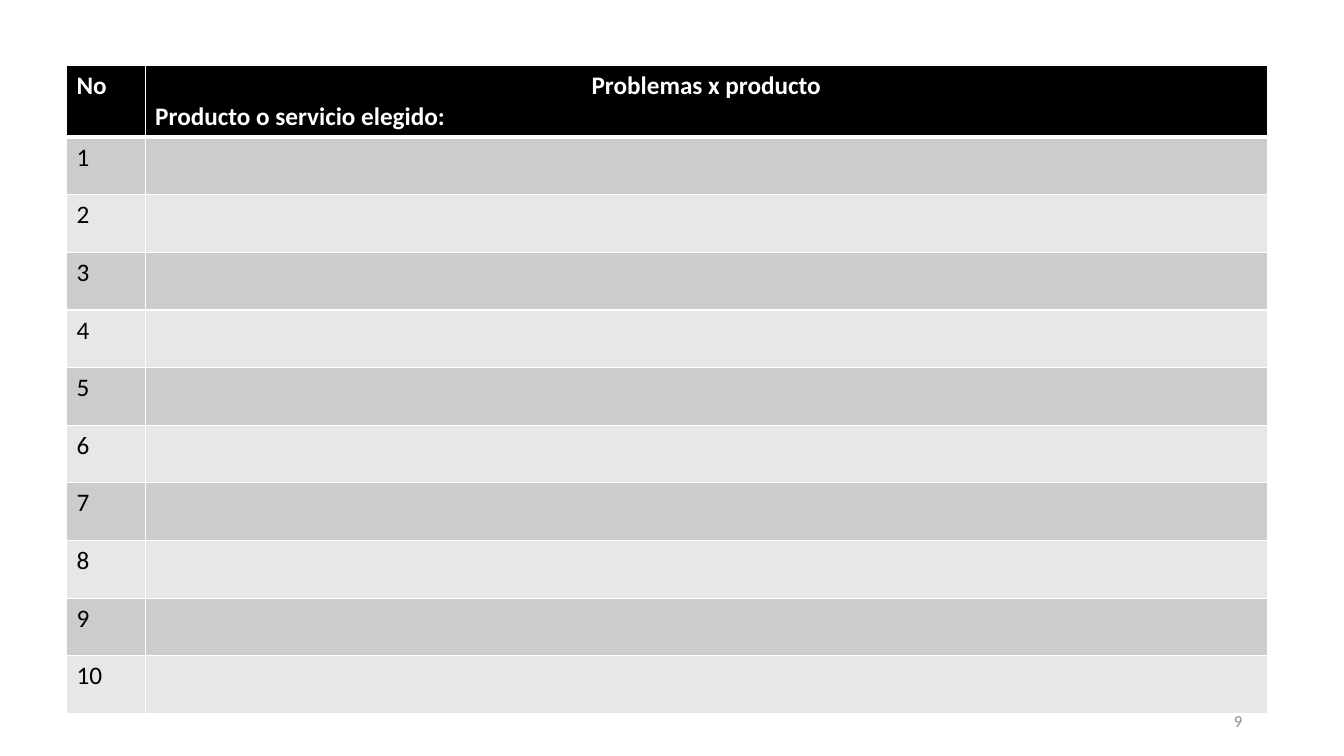
"""Build a numbered worksheet table for the problems of a chosen product."""
from dataclasses import dataclass

from lxml.etree import SubElement
from pptx import Presentation
from pptx.dml.color import RGBColor
from pptx.enum.text import MSO_ANCHOR, PP_ALIGN
from pptx.oxml.ns import qn
from pptx.util import Inches, Pt

COLORS = {
    "header": "000000",
    "odd": "CCCCCC",
    "even": "E7E7E7",
    "border": "FFFFFF",
    "header_text": "FFFFFF",
    "body_text": "000000",
    "page_number": "8C8C8C",
}
FORMATS = {
    "header_text": {"name": "Calibri", "size": Pt(18), "bold": True},
    "body_text": {"name": "Calibri", "size": Pt(18), "bold": False},
    "page_number": {"name": "Calibri", "size": Pt(12), "bold": False},
}
COLUMN_WIDTHS = (0.78, 11.13)
TABLE_HEIGHT = 6.42
HEADER_HEIGHT = 0.7
PROBLEM_COUNT = 10


@dataclass(frozen=True)
class Line:
    text: str
    alignment: PP_ALIGN = PP_ALIGN.LEFT


@dataclass(frozen=True)
class Row:
    cells: tuple[tuple[Line, ...], ...]
    fill: str
    style: str
    height: float
    top_border: float = 1
    bottom_border: float = 1


def write_lines(text_frame, lines: tuple[Line, ...], style: str) -> None:
    for index, line in enumerate(lines):
        paragraph = text_frame.add_paragraph() if index else text_frame.paragraphs[0]
        paragraph.alignment = line.alignment
        run = paragraph.add_run()
        run.text = line.text
        for attribute, value in FORMATS[style].items():
            setattr(run.font, attribute, value)
        run.font.color.rgb = RGBColor.from_string(COLORS[style])


def add_borders(cell, top: float, bottom: float) -> None:
    properties = cell._tc.get_or_add_tcPr()
    widths = {"a:lnL": 1, "a:lnR": 1, "a:lnT": top, "a:lnB": bottom}
    for index, (tag, width) in enumerate(widths.items()):
        border = SubElement(properties, qn(tag), w=str(Pt(width)))
        fill = SubElement(border, qn("a:solidFill"))
        SubElement(fill, qn("a:srgbClr"), val=COLORS["border"])
        properties.insert(index, border)


def worksheet_rows() -> list[Row]:
    title = Line("Problemas x producto", PP_ALIGN.CENTER)
    subtitle = Line("Producto o servicio elegido:")
    header = Row(
        ((Line("No"),), (title, subtitle)),
        "header", "header_text", HEADER_HEIGHT, bottom_border=3,
    )
    body_height = (TABLE_HEIGHT - HEADER_HEIGHT) / PROBLEM_COUNT
    body = [
        Row(
            ((Line(str(number)),), ()),
            "odd" if number % 2 else "even", "body_text", body_height,
            top_border=3 if number == 1 else 1,
        )
        for number in range(1, PROBLEM_COUNT + 1)
    ]
    return [header, *body]


def add_worksheet(slide, rows: list[Row]) -> None:
    table = slide.shapes.add_table(
        len(rows), len(COLUMN_WIDTHS), Inches(0.66), Inches(0.65),
        Inches(sum(COLUMN_WIDTHS)), Inches(TABLE_HEIGHT),
    ).table
    for column, width in zip(table.columns, COLUMN_WIDTHS):
        column.width = Inches(width)
    for table_row, row in zip(table.rows, rows):
        table_row.height = Inches(row.height)
        for cell, lines in zip(table_row.cells, row.cells):
            cell.fill.solid()
            cell.fill.fore_color.rgb = RGBColor.from_string(COLORS[row.fill])
            add_borders(cell, row.top_border, row.bottom_border)
            write_lines(cell.text_frame, lines, row.style)


def add_page_number(slide, number: int) -> None:
    shape = slide.shapes.add_textbox(Inches(9.42), Inches(6.95), Inches(3), Inches(0.4))
    shape.text_frame.word_wrap = True
    shape.text_frame.vertical_anchor = MSO_ANCHOR.MIDDLE
    write_lines(shape.text_frame, (Line(str(number), PP_ALIGN.RIGHT),), "page_number")


def main() -> None:
    presentation = Presentation()
    presentation.slide_width = Inches(13.33)
    presentation.slide_height = Inches(7.5)
    slide = presentation.slides.add_slide(presentation.slide_layouts[6])
    add_worksheet(slide, worksheet_rows())
    add_page_number(slide, 9)
    presentation.save("out.pptx")


if __name__ == "__main__":
    main()
